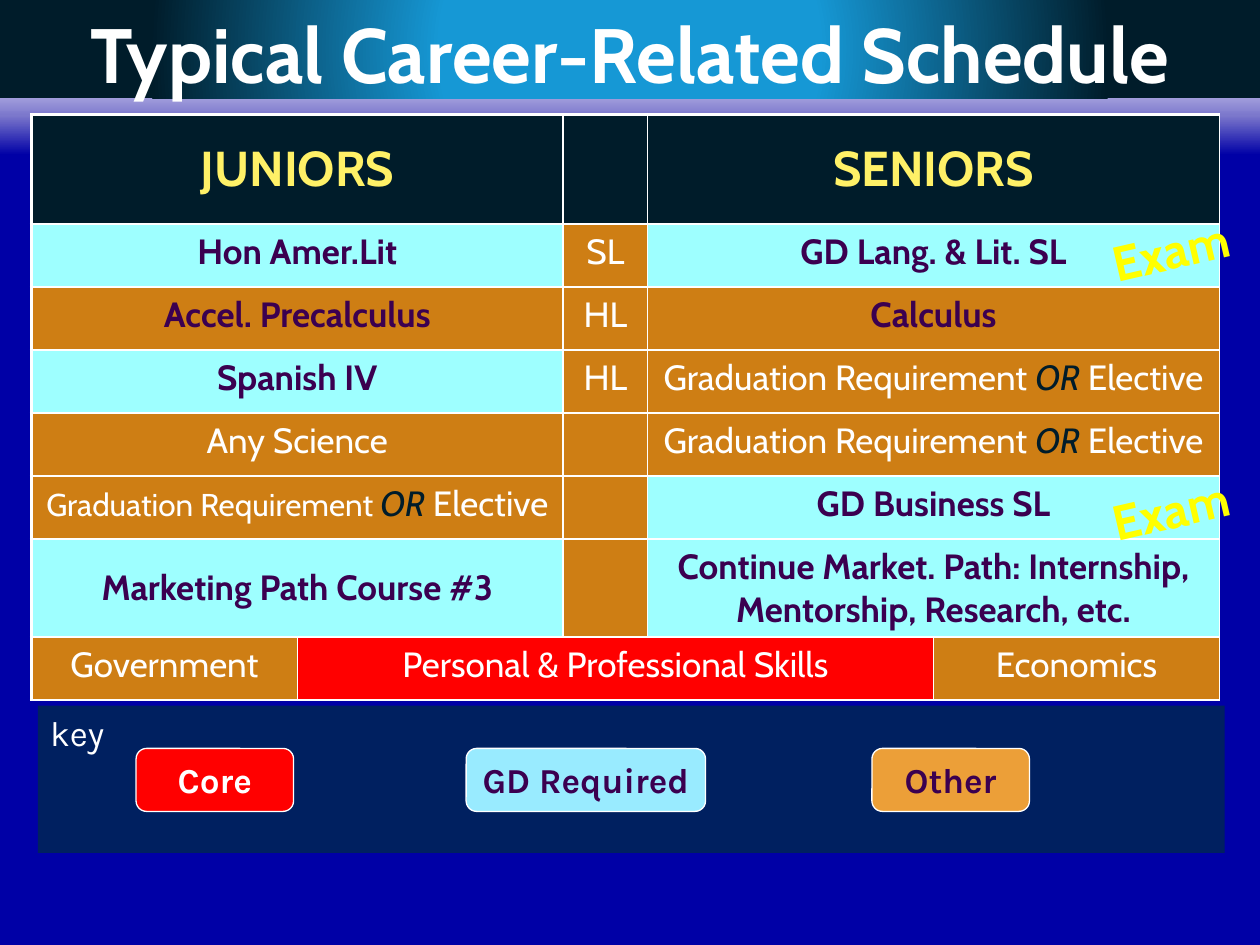
from lxml import etree
from pptx import Presentation
from pptx.dml.color import RGBColor
from pptx.enum.shapes import MSO_SHAPE
from pptx.enum.text import MSO_ANCHOR, PP_ALIGN
from pptx.oxml import parse_xml
from pptx.oxml.ns import nsdecls, qn
from pptx.util import Inches, Pt

RECT, PILL = MSO_SHAPE.RECTANGLE, MSO_SHAPE.ROUNDED_RECTANGLE
TOP, MIDDLE = MSO_ANCHOR.TOP, MSO_ANCHOR.MIDDLE
LEFT, CENTER = PP_ALIGN.LEFT, PP_ALIGN.CENTER

WHITE, YELLOW, PURPLE, NIGHT = "FFFFFF", "FFF167", "3B0050", "001C2A"
REQUIRED, OTHER, CORE = "9EFFFF", "CE7E14", "FF0000"

HEADING = dict(size=28, color=YELLOW, bold=True, anchor=MIDDLE)
COURSE = dict(color=PURPLE, bold=True)
CENTERED_COURSE = dict(COURSE, anchor=MIDDLE)
PLAIN = dict(color=WHITE)


def elective(size):
    return [("Graduation Requirement ", dict(size=size)),
            ("OR", dict(color=NIGHT, italic=True)), (" Elective", {})]


# Each cell: text, fill, format, number of columns it covers
SCHEDULE = [
    [("JUNIORS", NIGHT, HEADING, 2), ("", NIGHT, PLAIN, 1), ("SENIORS", NIGHT, HEADING, 2)],
    [("Hon Amer.Lit", REQUIRED, COURSE, 2), ("SL", OTHER, PLAIN, 1),
     ("GD Lang. & Lit. SL", REQUIRED, COURSE, 2)],
    [("Accel. Precalculus", OTHER, COURSE, 2), ("HL", OTHER, PLAIN, 1),
     ("Calculus", OTHER, COURSE, 2)],
    [("Spanish IV", REQUIRED, COURSE, 2), ("HL", OTHER, PLAIN, 1),
     (elective(20), OTHER, PLAIN, 2)],
    [("Any Science", OTHER, PLAIN, 2), ("", OTHER, PLAIN, 1), (elective(20), OTHER, PLAIN, 2)],
    [(elective(18), OTHER, PLAIN, 2), ("", OTHER, PLAIN, 1),
     ("GD Business SL", REQUIRED, COURSE, 2)],
    [("Marketing Path Course #3", REQUIRED, CENTERED_COURSE, 2), ("", OTHER, PLAIN, 1),
     ("Continue Market. Path: Internship, Mentorship, Research, etc.", REQUIRED, COURSE, 2)],
    [("Government", OTHER, PLAIN, 1), ("Personal & Professional Skills", CORE, PLAIN, 3),
     ("Economics", OTHER, PLAIN, 1)],
]
COLUMN_WIDTHS = [2.11, 2.11, 0.67, 2.27, 2.27]
ROW_HEIGHTS = [0.87] + [0.5] * 5 + [0.77, 0.5]
TABLE_LEFT, TABLE_TOP = 0.25, 0.91

EXAM_TOPS = [1.7, 3.76]
# Each key entry: label, left, width, fill, text colour
KEY = [("Core", 1.08, 1.25, CORE, WHITE),
       ("GD Required", 3.7, 1.9, "99EBFF", PURPLE),
       ("Other", 6.92, 1.25, "EC9F38", PURPLE)]


def rgb(value):
    return RGBColor.from_string(value)


def write(frame, text, font="Cabin", size=20, color=WHITE, bold=False, italic=False,
          align=CENTER, anchor=TOP):
    """Write a string, or a list of (text, changes) runs, as one paragraph."""
    frame.vertical_anchor = anchor
    para = frame.paragraphs[0]
    para.alignment = align
    runs = [(text, {})] if isinstance(text, str) else text
    for words, changes in runs:
        look = dict(size=size, color=color, bold=bold, italic=italic) | changes
        span = para.add_run()
        span.text = words
        span.font.name = font
        span.font.size = Pt(look["size"])
        span.font.bold = look["bold"]
        span.font.italic = look["italic"]
        span.font.color.rgb = rgb(look["color"])


def add_box(page, kind, left, top, width, height, fill, line=None):
    box = page.shapes.add_shape(kind, Inches(left), Inches(top), Inches(width), Inches(height))
    box.shadow.inherit = False
    box.fill.solid()
    box.fill.fore_color.rgb = rgb(fill)
    if line:
        box.line.color.rgb = rgb(line)
        box.line.width = Pt(0.75)
    else:
        box.line.fill.background()
    box.text_frame.word_wrap = True
    return box


def set_gradient(box, stops, direction):
    marks = "".join(f'<a:gs pos="{position * 1000}"><a:srgbClr val="{color}"/></a:gs>'
                    for position, color in stops)
    gradient = parse_xml(f'<a:gradFill {nsdecls("a")} rotWithShape="1">'
                         f'<a:gsLst>{marks}</a:gsLst>{direction}</a:gradFill>')
    properties = box.fill._xPr
    properties.replace(properties.find(qn("a:solidFill")), gradient)


def set_borders(cell, **widths):
    properties = cell._tc.get_or_add_tcPr()
    for index, (side, width) in enumerate(widths.items()):
        edge = etree.Element(qn(f"a:ln{side}"), w=str(Pt(width)))
        paint = etree.SubElement(edge, qn("a:solidFill"))
        etree.SubElement(paint, qn("a:srgbClr"), val=WHITE)
        properties.insert(index, edge)


def add_schedule(page):
    table = page.shapes.add_table(
        len(SCHEDULE), len(COLUMN_WIDTHS), Inches(TABLE_LEFT), Inches(TABLE_TOP),
        Inches(sum(COLUMN_WIDTHS)), Inches(sum(ROW_HEIGHTS))).table
    table.first_row = table.horz_banding = False
    for column, width in zip(table.columns, COLUMN_WIDTHS):
        column.width = Inches(width)
    for r, (cells, height) in enumerate(zip(SCHEDULE, ROW_HEIGHTS)):
        table.rows[r].height = Inches(height)
        start = 0
        for text, fill, look, span in cells:
            for c in range(start, start + span):
                cell = table.cell(r, c)
                cell.fill.solid()
                cell.fill.fore_color.rgb = rgb(fill)
                set_borders(cell, L=1 if c else 2.25, R=1, T=1 if r else 2.25, B=1)
            first = table.cell(r, start)
            if span > 1:
                first.merge(table.cell(r, start + span - 1))
            if text:
                write(first.text_frame, text, **look)
                first.vertical_anchor = look.get("anchor", TOP)
            start += span


def main():
    deck = Presentation()
    deck.slide_width, deck.slide_height = Inches(10), Inches(7.5)
    page = deck.slides.add_slide(deck.slide_layouts[6])
    page.background.fill.solid()
    page.background.fill.fore_color.rgb = rgb("0000A6")

    glow = add_box(page, RECT, 0, 0.78, 10, 0.45, "0000A6")
    set_gradient(glow, [(0, "A09CDC"), (30, "7C78CC"), (100, "0000A6")],
                 '<a:lin ang="5400000" scaled="0"/>')
    banner = add_box(page, RECT, 0, 0, 10, 0.78, NIGHT)
    set_gradient(banner, [(30, "1698D5"), (76, NIGHT), (100, NIGHT)],
                 '<a:path path="circle"><a:fillToRect l="50000" t="50000" r="50000" b="50000"/>'
                 '</a:path>')
    write(banner.text_frame, "Typical Career-Related Schedule", size=44, bold=True)

    add_schedule(page)

    for top in EXAM_TOPS:
        stamp = page.shapes.add_textbox(Inches(8.71), Inches(top), Inches(1.16), Inches(0.57))
        stamp.rotation = 347
        stamp.text_frame.word_wrap = False
        write(stamp.text_frame, "Exam", size=28, color="FFFF00", bold=True)

    panel = add_box(page, RECT, 0.3, 5.6, 9.42, 1.17, "002060")
    write(panel.text_frame, "key", font="Karla", align=LEFT)
    for label, left, width, fill, color in KEY:
        pill = add_box(page, PILL, left, 5.94, width, 0.5, fill, line=WHITE)
        write(pill.text_frame, label, font="Karla", color=color, bold=True, anchor=MIDDLE)

    deck.save("out.pptx")


if __name__ == "__main__":
    main()
